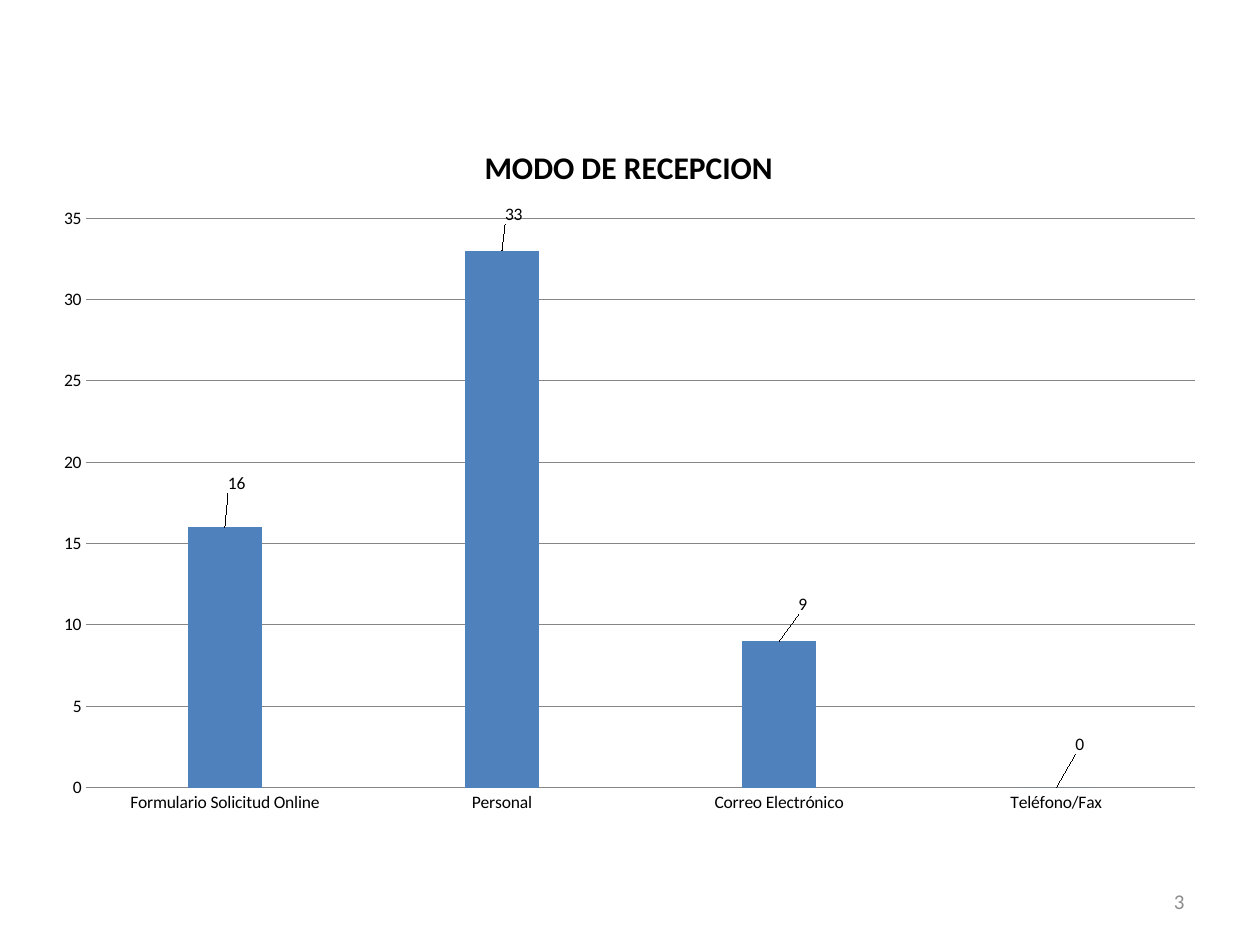
from lxml import etree
from pptx import Presentation
from pptx.chart.data import CategoryChartData
from pptx.dml.color import RGBColor
from pptx.enum.chart import XL_CHART_TYPE, XL_LABEL_POSITION, XL_TICK_MARK
from pptx.enum.text import MSO_ANCHOR, PP_ALIGN
from pptx.oxml.ns import qn
from pptx.util import Cm, Pt

COLUMNS = XL_CHART_TYPE.COLUMN_CLUSTERED
OUTSIDE = XL_LABEL_POSITION.OUTSIDE_END
NO_TICKS = XL_TICK_MARK.NONE
MIDDLE = MSO_ANCHOR.MIDDLE
RIGHT = PP_ALIGN.RIGHT

FONT = "Calibri"
COLORS = {"text": "000000", "number": "8C8C8C", "line": "868686",
          "blue": "4F81BD", "green": "9BBB59"}
CATEGORIES = ["Formulario Solicitud Online", "Personal",
              "Correo Electrónico", "Teléfono/Fax"]
VALUES = [16, 33, 9, 0]
# Shift of each value label, as fractions of the chart size
LABEL_SHIFTS = [(0.01, -0.04), (0.01, -0.03), (0.02, -0.03), (0.02, -0.04)]


def color(name):
    return RGBColor.from_string(COLORS[name])


def style_font(font, size, name="text", bold=False):
    font.name = FONT
    font.size = Pt(size)
    font.bold = bold
    font.color.rgb = color(name)


def make_layout(**settings):
    layout = etree.Element(qn("c:layout"))
    manual = etree.SubElement(layout, qn("c:manualLayout"))
    for tag, value in settings.items():
        etree.SubElement(manual, qn(f"c:{tag}")).set("val", str(value))
    return layout


def place_plot(chart):
    plot_area = chart._chartSpace.find(".//" + qn("c:plotArea"))
    for old in plot_area.findall(qn("c:layout")):
        plot_area.remove(old)
    plot_area.insert(0, make_layout(layoutTarget="inner", xMode="edge",
                                    yMode="edge", x=0.04, y=0.14,
                                    w=0.94, h=0.8))


def label_values(series):
    labels = series.data_labels
    labels.show_value = True
    labels.position = OUTSIDE
    for index in range(len(VALUES)):
        series.points[index].data_label.position = OUTSIDE
    label_elements = series._element.iter(qn("c:dLbl"))
    for element, (x, y) in zip(label_elements, LABEL_SHIFTS):
        element.insert(1, make_layout(x=x, y=y))


def style_axes(chart):
    for axis in (chart.category_axis, chart.value_axis):
        axis.major_tick_mark = NO_TICKS
        axis.minor_tick_mark = NO_TICKS
    chart.category_axis.format.line.color.rgb = color("line")
    value_axis = chart.value_axis
    value_axis.minimum_scale, value_axis.maximum_scale = 0, 35
    value_axis.major_unit = 5
    value_axis.format.line.fill.background()
    value_axis.has_major_gridlines = True
    value_axis.major_gridlines.format.line.color.rgb = color("line")


def add_column_chart(slide):
    data = CategoryChartData()
    data.categories = CATEGORIES
    empty = [None] * len(CATEGORIES)
    for number, values in enumerate((empty, VALUES, empty), 1):
        data.add_series(f"Series {number}", values)
    chart = slide.shapes.add_chart(COLUMNS, Cm(0.79), Cm(2.39), Cm(23.77),
                                   Cm(14.35), data).chart
    style_font(chart.font, 10)
    chart.has_legend = False

    # Title
    chart.has_title = True
    title = chart.chart_title
    title.include_in_layout = False
    title.text_frame.text = "MODO DE RECEPCION"
    style_font(title.text_frame.paragraphs[0].font, 18, bold=True)

    # Columns
    plot = chart.plots[0]
    plot.gap_width = 75
    plot.overlap = 0
    plot.vary_by_categories = False
    for series, name in zip(plot.series, ("blue", "blue", "green")):
        series.format.fill.solid()
        series.format.fill.fore_color.rgb = color(name)
    label_values(plot.series[1])
    style_axes(chart)
    place_plot(chart)


def add_page_number(slide, number):
    box = slide.shapes.add_textbox(Cm(18.21), Cm(17.65), Cm(5.92), Cm(1.02))
    frame = box.text_frame
    frame.word_wrap = True
    frame.vertical_anchor = MIDDLE
    paragraph = frame.paragraphs[0]
    paragraph.text = number
    paragraph.alignment = RIGHT
    style_font(paragraph.font, 12, "number")


def main():
    presentation = Presentation()
    presentation.slide_width = Cm(25.4)
    presentation.slide_height = Cm(19.05)
    slide = presentation.slides.add_slide(presentation.slide_layouts[6])
    add_page_number(slide, "3")
    add_column_chart(slide)
    presentation.save("out.pptx")


if __name__ == "__main__":
    main()
